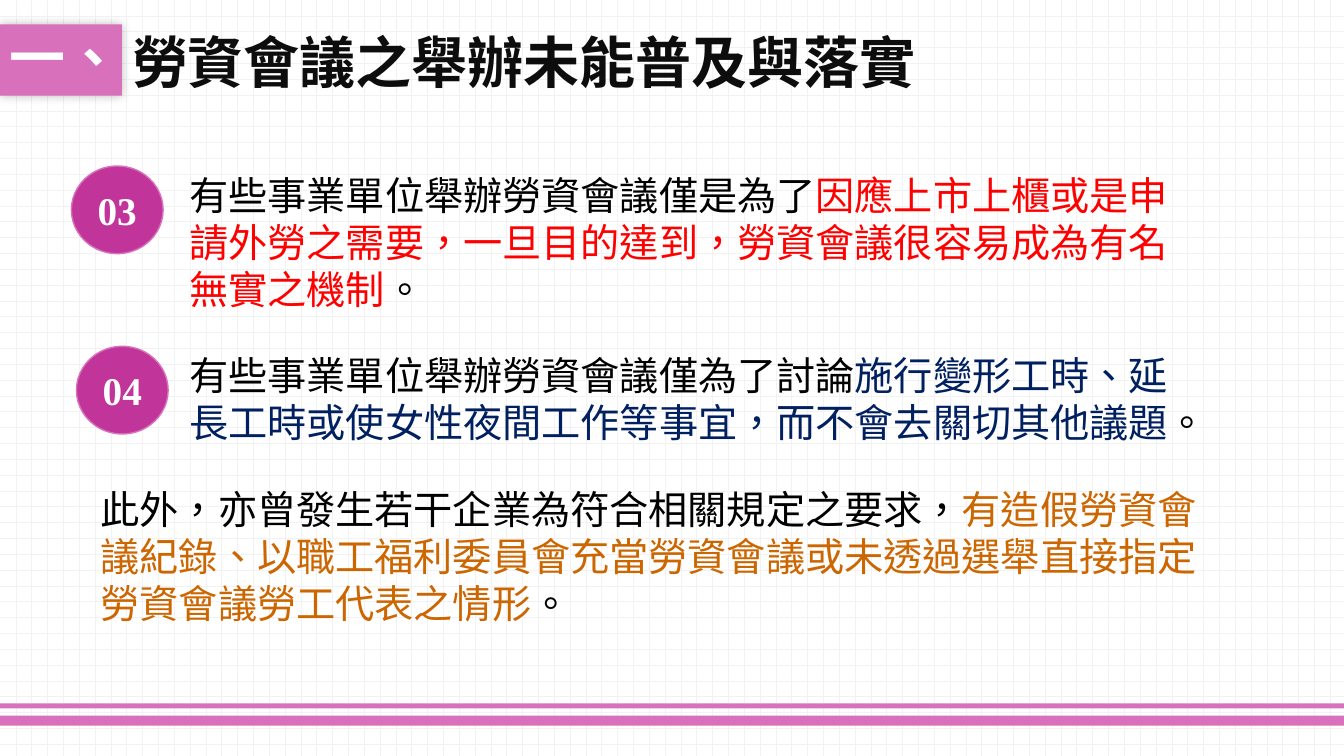
from lxml import etree
from pptx import Presentation
from pptx.dml.color import RGBColor
from pptx.enum import dml, shapes, text
from pptx.oxml.ns import qn
from pptx.util import Pt

SANS, SERIF = "Noto Sans CJK SC", "Times New Roman"
PINK, PLUM, WHITE, BLACK = "D870BB", "C1359A", "FFFFFF", "000000"
HEAD = {"size": Pt(40), "name": SANS, "bold": True}
BODY = {"size": Pt(28), "name": SERIF, "bold": False}
MARK = {**BODY, "bold": True}


def tint(color, code):
    color.rgb = RGBColor.from_string(code)


def put(item, values):
    for key, value in values.items():
        setattr(item, key, value)


def write(shape, runs, font, para=None, middle=True):
    """Fill a shape with one paragraph of (words, colour) runs."""
    anchor = text.MSO_ANCHOR.MIDDLE if middle else text.MSO_ANCHOR.TOP
    frame = shape.text_frame
    put(frame, {"word_wrap": True, "vertical_anchor": anchor,
                "auto_size": text.MSO_AUTO_SIZE.NONE})
    line = frame.paragraphs[0]
    put(line, {"alignment": text.PP_ALIGN.LEFT, **(para or {})})
    for words, code in runs:
        run = line.add_run()
        run.text = words
        put(run.font, font)
        tint(run.font.color, code)
        props = run.font._element
        props.set("lang", "zh-TW")
        etree.SubElement(props, qn("a:ea")).set("typeface", SANS)


def solid(slide, kind, box, code, edge=None):
    shape = slide.shapes.add_shape(kind, *map(Pt, box))
    shape.shadow.inherit = False
    shape.fill.solid()
    tint(shape.fill.fore_color, code)
    if edge:
        tint(shape.line.color, edge)
        shape.line.width = Pt(1)
    else:
        shape.line.fill.background()
    return shape


def glow(shape):
    """Soft shadow around a shape."""
    effects = shape._element.spPr.find(qn("a:effectLst"))
    shade = etree.SubElement(effects, qn("a:outerShdw"), blurRad=str(Pt(7)), dist="0")
    color = etree.SubElement(shade, qn("a:srgbClr"), val=BLACK)
    etree.SubElement(color, qn("a:alpha"), val="25000")


def header(slide, box, number, words):
    left, top, width, height = box
    tab = 87.1
    # Numbered tab
    shape = solid(slide, shapes.MSO_SHAPE.RECTANGLE, (left, top, tab, height), PINK)
    glow(shape)
    write(shape, [(number, WHITE)], HEAD, {"line_spacing": 0.9, "space_before": Pt(10)})
    # Slide title
    title = slide.shapes.title
    put(title, {"left": Pt(left + tab), "top": Pt(top + 0.7),
                "width": Pt(width - tab), "height": Pt(height)})
    write(title, [(words, "0D0D0D")], HEAD, {"line_spacing": 1.0, "space_before": Pt(10)})


def passage(slide, box, runs):
    shape = slide.shapes.add_textbox(*map(Pt, box))
    write(shape, runs, BODY, {"line_spacing": Pt(33.6)}, middle=False)


def point(slide, box, indent, number, runs):
    left, top, width, height = box
    # Round number badge
    badge = solid(slide, shapes.MSO_SHAPE.OVAL, (left, top, 65.5, 62.6), PLUM, PINK)
    write(badge, [(number, WHITE)], MARK, {"alignment": text.PP_ALIGN.CENTER})
    # Statement beside it
    passage(slide, (left + indent, top, width - indent, height), runs)


def footer(slide, box):
    left, top, width, height = box
    for shift, thick in ((0, 3.6), (height - 7.2, 7.2)):
        solid(slide, shapes.MSO_SHAPE.RECTANGLE, (left, top + shift, width, thick), PINK)


def main():
    deck = Presentation()
    put(deck, {"slide_width": Pt(960), "slide_height": Pt(540)})
    slide = deck.slides.add_slide(deck.slide_layouts[5])

    # Dotted grid background
    fill = slide.background.fill
    fill.patterned()
    fill.pattern = dml.MSO_PATTERN.DOTTED_GRID
    tint(fill.fore_color, "F2F2F2")
    tint(fill.back_color, WHITE)

    footer(slide, (0, 502.4, 960, 16))
    header(slide, (0, 17.4, 678, 51), "一、", "勞資會議之舉辦未能普及與落實")
    point(slide, (51, 118.6, 806, 108.7), 77.2, "03", [
        ("有些事業單位舉辦勞資會議僅是為了", BLACK),
        ("因應上市上櫃或是申請外勞之需要，一旦目的達到，勞資會議很容易成為有名無實之機制", "FF0000"),
        ("。", BLACK)])
    point(slide, (54.6, 247.4, 793.6, 97.2), 73.6, "04", [
        ("有些事業單位舉辦勞資會議僅為了討論", BLACK),
        ("施行變形工時、延長工時或使女性夜間工作等事宜，而不會去關切其他議題", "002060"),
        ("。", BLACK)])
    # Closing remark
    passage(slide, (64.8, 343.4, 799.2, 108.7), [
        ("此外，亦曾發生若干企業為符合相關規定之要求，", BLACK),
        ("有造假勞資會議紀錄、以職工福利委員會充當勞資會議或未透過選舉直接指定勞資會議勞工代表之情形", "CC6600"),
        ("。", BLACK)])
    deck.save("out.pptx")


if __name__ == "__main__":
    main()
